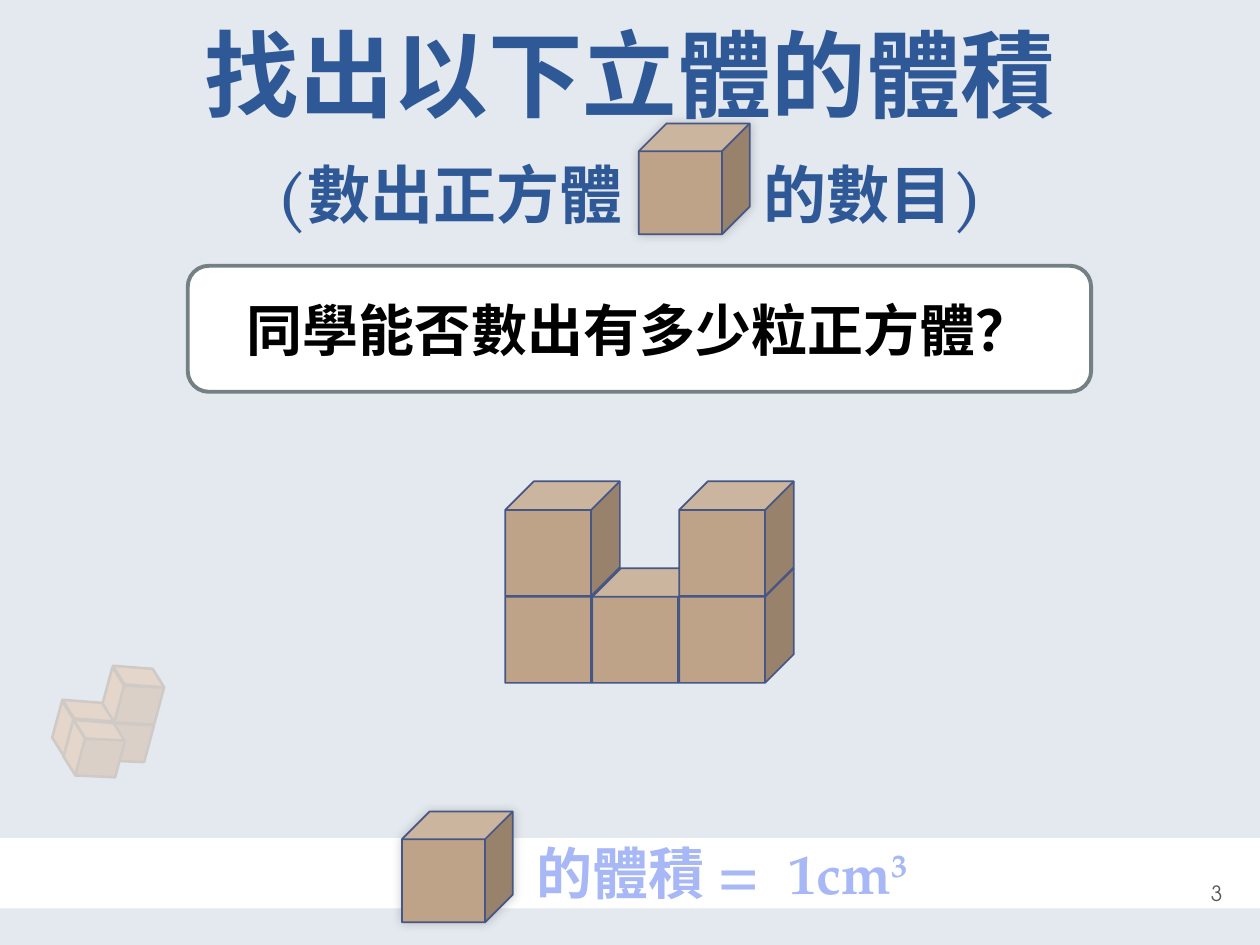
import pptx
import pptx.util
import pptx.dml.color
import pptx.enum.shapes
import pptx.enum.text
import pptx.oxml
import pptx.oxml.ns
from pptx.util import Inches

SHAPE = pptx.enum.shapes.MSO_SHAPE
ANCHOR = pptx.enum.text.MSO_ANCHOR
ALIGN = pptx.enum.text.PP_ALIGN
NS = pptx.oxml.ns.nsdecls("a")

PALE, WOOD, EDGE = "E4E9EF", "BEA388", "475785"
TITLE_FONT = "TeX Gyre Pagella"
CUBE = 0.91
STEP = 0.69  # distance between neighbouring cubes


def rgb(color):
    return pptx.dml.color.RGBColor.from_string(color)


def add_shape(shapes, kind, box, fill, line=None, width=1):
    s = shapes.add_shape(kind, *map(Inches, box))
    s.shadow.inherit = False
    s.fill.solid()
    s.fill.fore_color.rgb = rgb(fill)
    if line:
        s.line.color.rgb = rgb(line)
        s.line.width = pptx.util.Pt(width)
    else:
        s.line.fill.background()
    return s


def add_cube(shapes, left, top, size=CUBE):
    return add_shape(shapes, SHAPE.CUBE, (left, top, size, size), WOOD, EDGE)


def add_shadow(s):
    effects = s._element.spPr.find(pptx.oxml.ns.qn("a:effectLst"))
    effects.append(pptx.oxml.parse_xml(
        f'<a:outerShdw {NS} blurRad="76200" dist="0" dir="18900000" rotWithShape="0">'
        '<a:srgbClr val="000000"><a:alpha val="20000"/></a:srgbClr></a:outerShdw>'))


def add_text_box(shapes, box, anchor, insets=(0.1, 0.05, 0.1, 0.05)):
    tf = shapes.add_textbox(*map(Inches, box)).text_frame
    tf.word_wrap = True
    tf.vertical_anchor = anchor
    (tf.margin_left, tf.margin_top,
     tf.margin_right, tf.margin_bottom) = map(Inches, insets)
    return tf


def add_run(p, text, size, font, color=None, bold=True):
    r = p.add_run()
    r.text = text
    r.font.size = pptx.util.Pt(size)
    r.font.name = font
    r.font.bold = bold
    if color:
        r.font.color.rgb = rgb(color)
    return r


def add_gradient_outline(r):
    stops = ((0, "C4CEF3"), (9, "A8B8F6"), (50, "062783"), (79, "A8B8F6"), (100, "C4CEF3"))
    gs = "".join(f'<a:gs pos="{pos * 1000}"><a:srgbClr val="{c}"/></a:gs>' for pos, c in stops)
    rPr = r.font._element
    rPr.insert(0, pptx.oxml.parse_xml(
        f'<a:ln {NS} w="10541"><a:solidFill><a:srgbClr val="576EAE"/></a:solidFill></a:ln>'))
    rPr.insert(1, pptx.oxml.parse_xml(
        f'<a:gradFill {NS}><a:gsLst>{gs}</a:gsLst><a:lin ang="5400000"/></a:gradFill>'))


def add_faded_blocks(shapes):
    """Tilted blocks in the corner, under a translucent veil."""
    # face: width, height, rotation, flips, skew, fill
    faces = {
        "side": (0.42, 0.13, 105, ("flipH", "flipV"), 0.923, "E68422"),
        "top": (0.42, 0.14, 184.5, ("flipV",), 0.735, "E68422"),
        "front": (0.37, 0.31, 105, ("flipH",), 0.219, "B26314"),
    }
    group = shapes.add_group_shape()
    for face, left, top in (
            ("side", 0.29, 5.72), ("top", 0.49, 5.57), ("side", 0.69, 5.45),
            ("top", 0.89, 5.3), ("front", 0.84, 5.74), ("top", 0.58, 5.73),
            ("side", 0.38, 5.87), ("front", 0.61, 5.86), ("front", 0.92, 5.44)):
        width, height, rotation, flips, skew, fill = faces[face]
        s = add_shape(group.shapes, SHAPE.PARALLELOGRAM, (left, top, width, height),
                      fill, "77420D", 1.5)
        s.adjustments[0] = skew
        s.rotation = rotation
        for flip in flips:
            s._element.spPr.xfrm.set(flip, "1")
    veil = add_shape(shapes, SHAPE.RECTANGLE, (0, 3.84, 1.5, 2.63), PALE)
    color = veil._element.spPr.find(".//" + pptx.oxml.ns.qn("a:srgbClr"))
    color.append(pptx.oxml.parse_xml(f'<a:alpha {NS} val="82000"/>'))


def add_volume_key(shapes):
    group = shapes.add_group_shape()
    add_shadow(add_cube(group.shapes, 3.19, 6.44, 0.88))
    tf = add_text_box(group.shapes, (4.25, 6.41, 3.24, 1.09), ANCHOR.MIDDLE, (0.01,) * 4)
    p = tf.paragraphs[0]
    p.line_spacing = 0.9
    for text in ("的體積 =  1cm", "3"):
        r = add_run(p, text, 32, TITLE_FONT)
        add_gradient_outline(r)
    r.font._element.set("baseline", "30000")


def add_title(shapes):
    tf = add_text_box(shapes, (0.5, 0.13, 9, 1.75), ANCHOR.BOTTOM)
    p = tf.paragraphs[0]
    p.alignment = ALIGN.CENTER
    p.line_spacing = pptx.util.Pt(58)
    add_run(p, "找出以下立體的體積", 54, TITLE_FONT, "2F5897")
    p.add_line_break()
    add_run(p, "(數出正方體　　 的數目)", 36, TITLE_FONT, "2F5897")


def add_question(shapes):
    s = add_shape(shapes, SHAPE.ROUNDED_RECTANGLE, (1.49, 2.11, 7.17, 1),
                  "FFFFFF", "758085", 2.25)
    tf = s.text_frame
    tf.word_wrap = True
    tf.vertical_anchor = ANCHOR.MIDDLE
    p = tf.paragraphs[0]
    p.alignment = ALIGN.CENTER
    add_run(p, "同學能否數出有多少粒正方體？", 32, "Arial", "000000")


def add_solid(shapes):
    left, bottom = 4.01, 4.51
    for column, row in ((0, 0), (0, 1), (1, 0), (2, 0), (2, 1)):
        add_cube(shapes, left + column * STEP, bottom - row * STEP)


def main():
    prs = pptx.Presentation()
    prs.slide_width, prs.slide_height = Inches(10), Inches(7.5)
    shapes = prs.slides.add_slide(prs.slide_layouts[6]).shapes

    add_shape(shapes, SHAPE.RECTANGLE, (0, 7.21, 10, 0.29), PALE)
    add_shape(shapes, SHAPE.RECTANGLE, (0, 0, 10, 6.65), PALE)
    add_faded_blocks(shapes)
    add_shadow(add_cube(shapes, 5.07, 0.98, 0.88))
    number = add_text_box(shapes, (9.58, 6.89, 0.61, 0.4), ANCHOR.MIDDLE,
                          (0.03, 0.05, 0.05, 0.05))
    add_run(number.paragraphs[0], "3", 12, "TeX Gyre Adventor", "595959", bold=False)
    add_volume_key(shapes)
    add_title(shapes)
    add_question(shapes)
    add_solid(shapes)

    prs.save("out.pptx")


if __name__ == "__main__":
    main()
